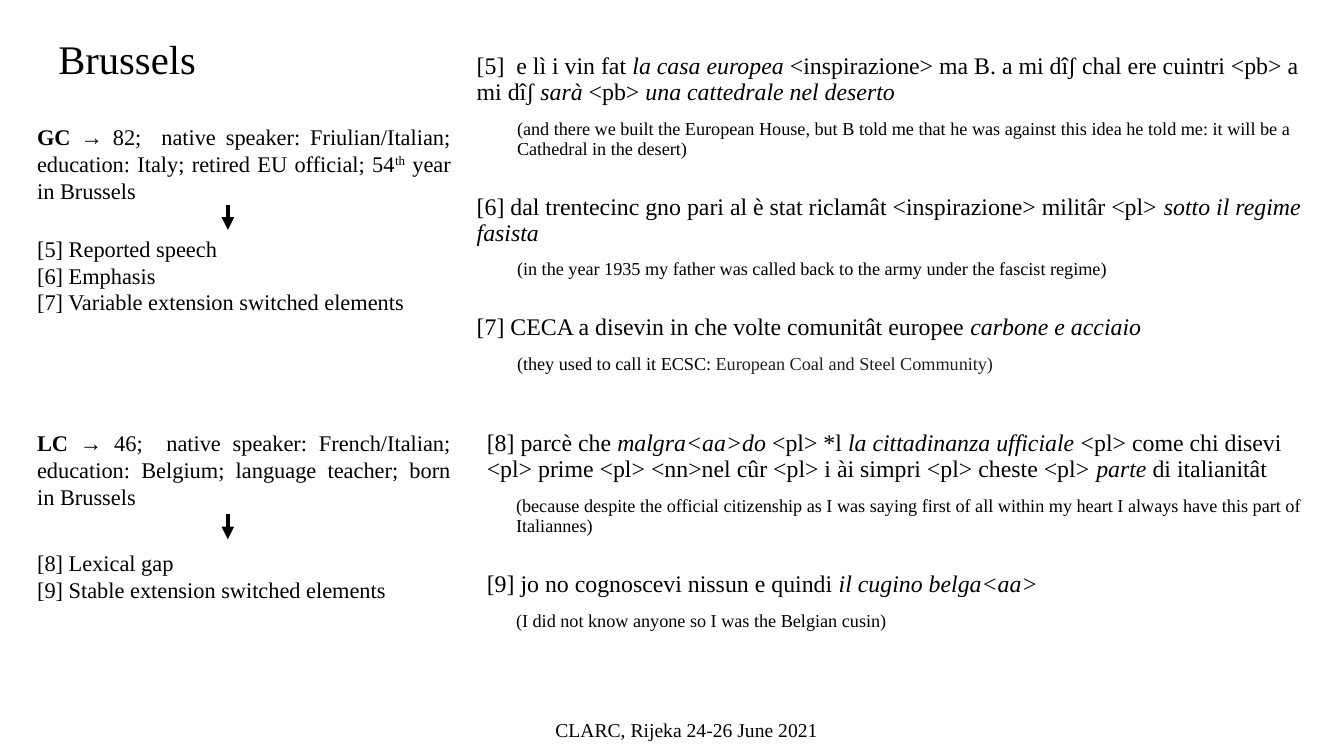
from dataclasses import dataclass

from lxml import etree
from pptx import Presentation
from pptx.dml.color import RGBColor
from pptx.enum.shapes import MSO_CONNECTOR
from pptx.enum.text import MSO_ANCHOR, PP_ALIGN
from pptx.oxml.ns import qn
from pptx.util import Inches, Pt

STRAIGHT = MSO_CONNECTOR.STRAIGHT
TOP, BOTTOM = MSO_ANCHOR.TOP, MSO_ANCHOR.BOTTOM
LEFT, CENTER, JUSTIFY = PP_ALIGN.LEFT, PP_ALIGN.CENTER, PP_ALIGN.JUSTIFY
PLAIN, ITALIC, BOLD, SUPER, GREY = "plain", "italic", "bold", "super", "grey"


@dataclass(frozen=True)
class Theme:
    font: str = "Times New Roman"
    ink: RGBColor = RGBColor(0x00, 0x00, 0x00)
    grey: RGBColor = RGBColor(0x20, 0x21, 0x22)
    title: int = 29
    example: int = 17
    profile: int = 16
    footer: int = 14
    gloss: int = 13
    arrow: int = 3
    tight: float = 0.9
    gap: float = 10
    wide_gap: float = 25.4


class SlideBuilder:
    def __init__(self, s, theme):
        self.s = s
        self.theme = theme

    def box(self, x, y, w, h, anchor=TOP):
        tf = self.s.shapes.add_textbox(Inches(x), Inches(y), Inches(w), Inches(h)).text_frame
        tf.word_wrap = True
        tf.vertical_anchor = anchor
        return tf

    def paragraph(self, tf, runs, size, align=LEFT, spacing=1.0, before=0, indent=0):
        p = tf.paragraphs[0] if not tf.paragraphs[0].runs else tf.add_paragraph()
        p.alignment = align
        p.line_spacing = spacing
        p.space_before = Pt(before)
        if indent:
            p._p.get_or_add_pPr().set("marL", str(Inches(indent)))
        for text, style in runs:
            r = p.add_run()
            r.text = text
            r.font.name = self.theme.font
            r.font.size = Pt(size)
            r.font.bold = style == BOLD
            r.font.italic = style == ITALIC
            r.font.color.rgb = self.theme.grey if style == GREY else self.theme.ink
            if style == SUPER:
                r._r.get_or_add_rPr().set("baseline", "30000")

    def line(self, x, y, w, h, text, size, align=LEFT, anchor=TOP):
        tf = self.box(x, y, w, h, anchor)
        self.paragraph(tf, [(text, PLAIN)], size, align, self.theme.tight)

    def profile(self, y, h, paragraphs):
        tf = self.box(0.27, y, 4.3, h)
        for runs in paragraphs:
            self.paragraph(tf, runs, self.theme.profile, JUSTIFY)

    def examples(self, x, y, h, indent, pairs):
        t = self.theme
        tf = self.box(x, y, 8.44, h)
        for i, (example, gloss) in enumerate(pairs):
            before = t.wide_gap if i else 0
            self.paragraph(tf, example, t.example, LEFT, t.tight, before)
            self.paragraph(tf, gloss, t.gloss, LEFT, t.tight, t.gap, indent)

    def down_arrow(self, x, y, length):
        sp = self.s.shapes.add_connector(
            STRAIGHT, Inches(x), Inches(y), Inches(x), Inches(y + length))
        sp.line.color.rgb = self.theme.ink
        sp.line.width = Pt(self.theme.arrow)
        etree.SubElement(sp.line._get_or_add_ln(), qn("a:tailEnd"), type="triangle")
        etree.SubElement(sp._element.spPr, qn("a:effectLst"))


# Speakers: top and height of the profile, its arrow, and its list of topics
SPEAKERS = [
    (1.17, 0.98,
     [("GC", BOLD),
      (" → 82;  native speaker: Friulian/Italian; education: Italy; "
       "retired EU official; 54", PLAIN),
      ("th", SUPER), (" year in Brussels", PLAIN)],
     2.03, 2.28, 1.29,
     ["[5] Reported speech", "[6] Emphasis", "[7] Variable extension switched elements"]),
    (4.21, 1.01,
     [("LC", BOLD),
      (" → 46;  native speaker: French/Italian; education: Belgium; "
       "language teacher; born in Brussels", PLAIN)],
     5.1, 5.4, 0.87,
     ["[8] Lexical gap", "[9] Stable extension switched elements"]),
]

# Transcribed examples, each with its translation
GC_EXAMPLES = [
    ([("[5]  e lì i vin fat ", PLAIN), ("la casa europea ", ITALIC),
      ("<inspirazione> ma B. a mi dîʃ chal ere cuintri <pb> a mi dîʃ ", PLAIN),
      ("sarà ", ITALIC), ("<pb> ", PLAIN), ("una cattedrale nel deserto", ITALIC)],
     [("(and there we built the European House, but B told me that he was against "
       "this idea he told me: it will be a Cathedral in the desert)", PLAIN)]),
    ([("[6] dal trentecinc gno pari al è stat riclamât <inspirazione> militâr <pl> ", PLAIN),
      ("sotto il regime fasista", ITALIC)],
     [("(in the year 1935 my father was called back to the army under the "
       "fascist regime)", PLAIN)]),
    ([("[7] CECA a disevin in che volte comunitât europee ", PLAIN),
      ("carbone e acciaio", ITALIC)],
     [("(they used to call it ECSC: ", PLAIN),
      ("European Coal and Steel Community)", GREY)]),
]
LC_EXAMPLES = [
    ([("[8] parcè che ", PLAIN), ("malgra<aa>do ", ITALIC), ("<pl> *l ", PLAIN),
      ("la cittadinanza ufficiale ", ITALIC),
      ("<pl> come chi disevi <pl> prime <pl> <nn>nel cûr <pl> i ài simpri <pl> "
       "cheste <pl> ", PLAIN),
      ("parte ", ITALIC), ("di italianitât", PLAIN)],
     [("(because despite the official citizenship as I was saying first of all within "
       "my heart I always have this part of Italiannes)", PLAIN)]),
    ([("[9] jo no cognoscevi nissun e quindi ", PLAIN), ("il cugino belga<aa>", ITALIC)],
     [("(I did not know anyone so I was the Belgian cusin)", PLAIN)]),
]


def main():
    prs = Presentation()
    prs.slide_width, prs.slide_height = Inches(13.33), Inches(7.5)
    theme = Theme()
    slide = SlideBuilder(prs.slides.add_slide(prs.slide_layouts[6]), theme)

    # Title
    slide.line(0.48, 0.3, 4.3, 0.58, "Brussels", theme.title, anchor=BOTTOM)

    # Speaker profiles on the left
    for top, height, about, arrow_top, list_top, list_height, topics in SPEAKERS:
        slide.profile(top, height, [about])
        slide.down_arrow(2.26, arrow_top, 0.25)
        slide.profile(list_top, list_height, [[(topic, PLAIN)] for topic in topics])

    # Examples on the right
    slide.examples(4.63, 0.49, 3.41, 0.4, GC_EXAMPLES)
    slide.examples(4.73, 4.23, 2.21, 0.29, LC_EXAMPLES)

    # Footer
    slide.line(1.55, 7.1, 10.52, 0.3, "CLARC, Rijeka 24-26 June 2021", theme.footer, CENTER)

    prs.save("out.pptx")


if __name__ == "__main__":
    main()
